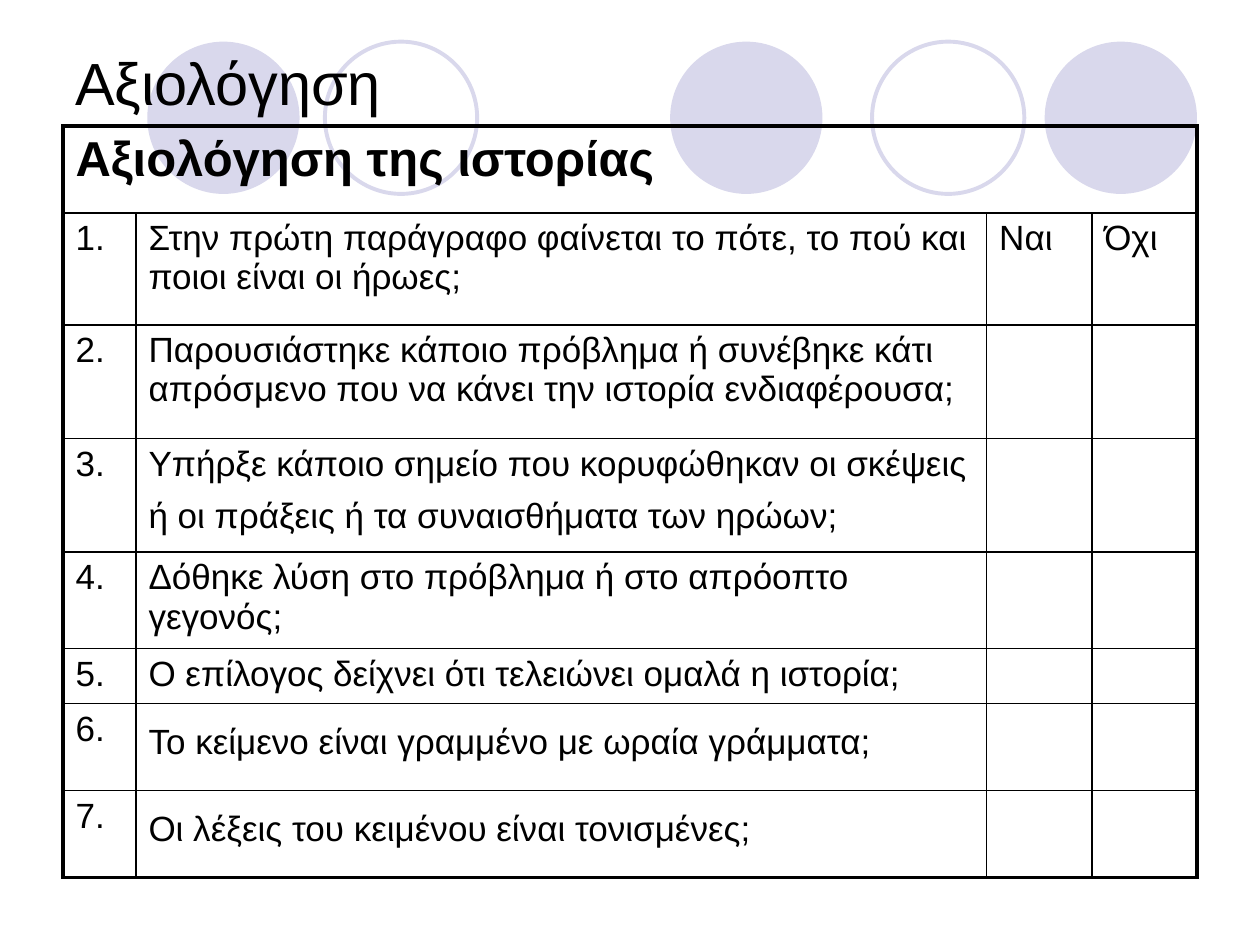
from dataclasses import dataclass

from lxml.etree import SubElement
from pptx import Presentation
from pptx.dml.color import RGBColor
from pptx.enum.shapes import MSO_SHAPE as Preset
from pptx.enum.text import MSO_ANCHOR as Anchor
from pptx.oxml.ns import qn
from pptx.util import Cm, Pt


@dataclass(frozen=True)
class Theme:
    font: str = "Arial"
    ink: str = "000000"
    lilac: str = "D9D8EC"
    title_size: int = 34
    heading_size: int = 28
    body_size: int = 20
    thick: float = 2.25
    thin: float = 1


theme = Theme()


def style_span(span, size, bold=False):
    span.font.name = theme.font
    span.font.size = Pt(size)
    span.font.bold = bold
    span.font.color.rgb = RGBColor.from_string(theme.ink)


def add_border(cell, side, width):
    line = SubElement(cell._tc.get_or_add_tcPr(), qn(f"a:{side}"), w=str(Pt(width)))
    fill = SubElement(line, qn("a:solidFill"))
    SubElement(fill, qn("a:srgbClr"), val=theme.ink)


deck = Presentation()
deck.slide_width, deck.slide_height = Cm(25.4), Cm(19.05)
page = deck.slides.add_slide(deck.slide_layouts[6])

circles = [(13.51, True), (21.06, True), (2.97, True), (17.58, False), (6.55, False)]
for left, solid in circles:
    circle = page.shapes.add_shape(Preset.OVAL, Cm(left), Cm(0.84), Cm(3.07), Cm(3.07))
    circle.shadow.inherit = False
    if solid:
        circle.fill.solid()
        circle.fill.fore_color.rgb = RGBColor.from_string(theme.lilac)
        circle.line.fill.background()
    else:
        circle.fill.background()
        circle.line.color.rgb = RGBColor.from_string(theme.lilac)
        circle.line.width = Pt(theme.thick)

title = page.shapes.add_textbox(Cm(1.27), Cm(0.76), Cm(22.86), Cm(1.78))
title.text_frame.word_wrap = True
title.text_frame.vertical_anchor = Anchor.MIDDLE
title.text_frame.text = "Αξιολόγηση"
style_span(title.text_frame.paragraphs[0].runs[0], theme.title_size)

questions = [
    "Στην πρώτη παράγραφο φαίνεται το πότε, το πού και ποιοι είναι οι ήρωες;",
    "Παρουσιάστηκε κάποιο πρόβλημα ή συνέβηκε κάτι απρόσμενο που να κάνει την ιστορία ενδιαφέρουσα;",
    "Υπήρξε κάποιο σημείο που κορυφώθηκαν οι σκέψεις ή οι πράξεις ή τα συναισθήματα των ηρώων;",
    "Δόθηκε λύση στο πρόβλημα ή στο απρόοπτο γεγονός;",
    "Ο επίλογος δείχνει ότι τελειώνει ομαλά η ιστορία;",
    "Το κείμενο είναι γραμμένο με ωραία γράμματα;",
    "Οι λέξεις του κειμένου είναι τονισμένες;",
]
large_space_rows = {3, 6, 7}
rows = [["Αξιολόγηση της ιστορίας", "", "", ""]]
rows += [[f"{number}.", question, "", ""] for number, question in enumerate(questions, 1)]
rows[1][2:] = ["Ναι", "Όχι"]

column_widths = [1.47, 17.15, 2.12, 2.12]
row_heights = [1.75, 2.26, 2.29, 1.75, 1.75, 1.11, 1.75, 1.75]
last_row, last_column = len(rows) - 1, len(column_widths) - 1

frame = page.shapes.add_table(
    len(rows), len(column_widths), Cm(1.27), Cm(2.54), Cm(sum(column_widths)), Cm(sum(row_heights))
)
table = frame.table
table.first_row = table.horz_banding = False
for column, width in zip(table.columns, column_widths):
    column.width = Cm(width)
for row, height in zip(table.rows, row_heights):
    row.height = Cm(height)
table.cell(0, 0).merge(table.cell(0, last_column))

for r, texts in enumerate(rows):
    for c, text in enumerate(texts):
        cell = table.cell(r, c)
        outer_sides = {
            "lnL": c == 0,
            "lnR": c == last_column or r == 0,
            "lnT": r == 0,
            "lnB": r == last_row,
        }
        for side, outer in outer_sides.items():
            add_border(cell, side, theme.thick if outer else theme.thin)
        cell.fill.background()
        if text:
            cell.text_frame.text = text
            para = cell.text_frame.paragraphs[0]
            size = theme.heading_size if r == 0 else theme.body_size
            style_span(para.runs[0], size, bold=r == 0)
            if c == 1 and r in large_space_rows:
                space = para.add_run()
                space.text = " "
                style_span(space, theme.heading_size)

deck.save("out.pptx")
